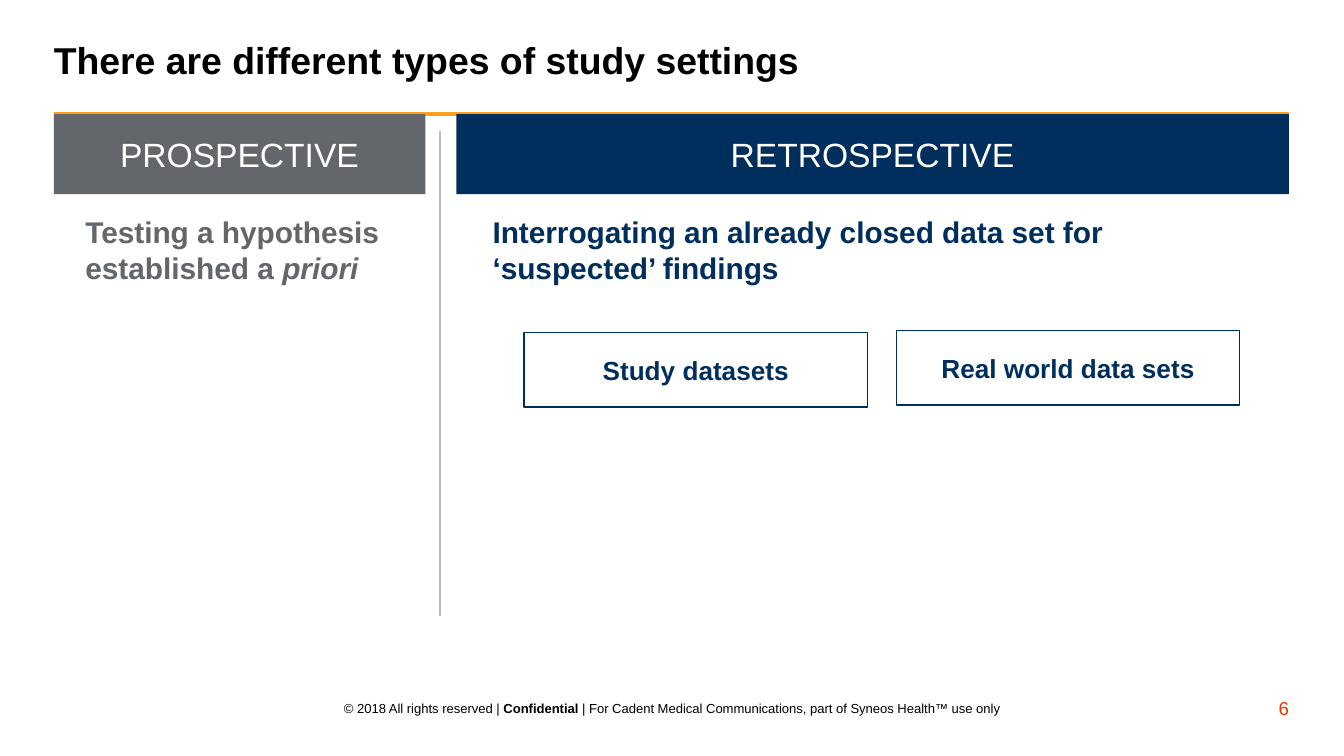
from dataclasses import dataclass

from lxml.etree import SubElement
from pptx import Presentation
from pptx.dml.color import RGBColor
from pptx.enum.shapes import MSO_CONNECTOR as Connector, MSO_SHAPE as Preset
from pptx.enum.text import MSO_ANCHOR as Anchor, PP_ALIGN as Align
from pptx.oxml.ns import qn
from pptx.util import Emu, Pt

EMU_PER_PX = 4572  # 200 px to the inch
COLORS = {
    "black": "000000",
    "white": "FFFFFF",
    "gray": "63666A",
    "navy": "002E5D",
    "orange": "FF9E1B",
    "red": "EB3300",
    "divider": "BBBCBC",
}


@dataclass(frozen=True)
class Box:
    left: int
    top: int
    width: int
    height: int


@dataclass(frozen=True)
class Span:
    text: str
    bold: bool = False
    italic: bool = False


@dataclass(frozen=True)
class Style:
    size: int
    color: str
    align: Align = Align.LEFT
    anchor: Anchor = Anchor.MIDDLE
    wrap: bool = True
    line_spacing: float = 1.0


@dataclass(frozen=True)
class Column:
    heading: str
    color: str
    header: Box
    summary_box: Box
    summary: tuple[Span, ...]


def px(length: int) -> Emu:
    return Emu(length * EMU_PER_PX)


def emu(box: Box) -> tuple[Emu, ...]:
    return px(box.left), px(box.top), px(box.width), px(box.height)


def rgb(name: str) -> RGBColor:
    return RGBColor.from_string(COLORS[name])


def write(shape, spans: tuple[Span, ...], style: Style) -> None:
    frame = shape.text_frame
    frame.word_wrap = style.wrap
    frame.vertical_anchor = style.anchor
    frame.margin_left = frame.margin_right = frame.margin_top = frame.margin_bottom = 0
    paragraph = frame.paragraphs[0]
    paragraph.alignment = style.align
    paragraph.line_spacing = style.line_spacing
    for span in spans:
        run = paragraph.add_run()
        run.text = span.text
        run.font.name = "Arial"
        run.font.size = Pt(style.size)
        run.font.bold = span.bold
        run.font.italic = span.italic
        run.font.color.rgb = rgb(style.color)


def add_text(slide, box: Box, spans: tuple[Span, ...], style: Style) -> None:
    write(slide.shapes.add_textbox(*emu(box)), spans, style)


def add_panel(slide, box: Box, label: Span, style: Style,
              fill: str | None = None, outline: str | None = None) -> None:
    panel = slide.shapes.add_shape(Preset.RECTANGLE, *emu(box))
    panel.shadow.inherit = False
    if fill:
        panel.fill.solid()
        panel.fill.fore_color.rgb = rgb(fill)
    else:
        panel.fill.background()
    if outline:
        panel.line.color.rgb = rgb(outline)
        panel.line.width = Pt(0.75)
    else:
        panel.line.fill.background()
    write(panel, (label,), style)


def add_rule(slide, start: tuple[int, int], end: tuple[int, int],
             color: str, weight: float) -> None:
    rule = slide.shapes.add_connector(Connector.STRAIGHT, *map(px, start + end))
    rule.line.color.rgb = rgb(color)
    rule.line.width = Pt(weight)
    SubElement(rule._element.spPr, qn("a:effectLst"))


COLUMNS = (
    Column("PROSPECTIVE", "gray", Box(80, 170, 553, 119), Box(127, 318, 460, 282),
           (Span("Testing a hypothesis established a ", bold=True),
            Span("priori", bold=True, italic=True))),
    Column("RETROSPECTIVE", "navy", Box(679, 170, 1239, 119), Box(733, 318, 988, 140),
           (Span("Interrogating an already closed data set for ‘suspected’ findings",
                 bold=True),)),
)
DATA_SOURCES = {
    "Study datasets": Box(780, 495, 511, 111),
    "Real world data sets": Box(1334, 492, 511, 111),
}
FOOTER = (
    Span("© 2018 All rights reserved | "),
    Span("Confidential", bold=True),
    Span(" | For Cadent Medical Communications, part of Syneos Health™ use only"),
)


def main() -> None:
    deck = Presentation()
    deck.slide_width, deck.slide_height = px(2000), px(1125)
    slide = deck.slides.add_slide(deck.slide_layouts[6])

    add_text(slide, Box(509, 1032, 982, 44), FOOTER, Style(7, "black", Align.CENTER))
    add_text(slide, Box(1836, 1037, 82, 34), (Span("6"),), Style(10, "red", Align.RIGHT))
    add_rule(slide, (80, 170), (1918, 170), "orange", 2)
    add_text(slide, Box(80, 19, 1838, 150),
             (Span("There are different types of study settings", bold=True),),
             Style(20, "black", line_spacing=0.85))

    for column in COLUMNS:
        add_panel(slide, column.header, Span(column.heading),
                  Style(18, "white", Align.CENTER), fill=column.color)
        add_text(slide, column.summary_box, column.summary,
                 Style(16, column.color, anchor=Anchor.TOP))
    add_rule(slide, (655, 195), (655, 917), "divider", 0.75)

    for name, box in DATA_SOURCES.items():
        add_panel(slide, box, Span(name, bold=True),
                  Style(14, "navy", Align.CENTER, wrap=False), outline="navy")

    deck.save("out.pptx")


if __name__ == "__main__":
    main()
